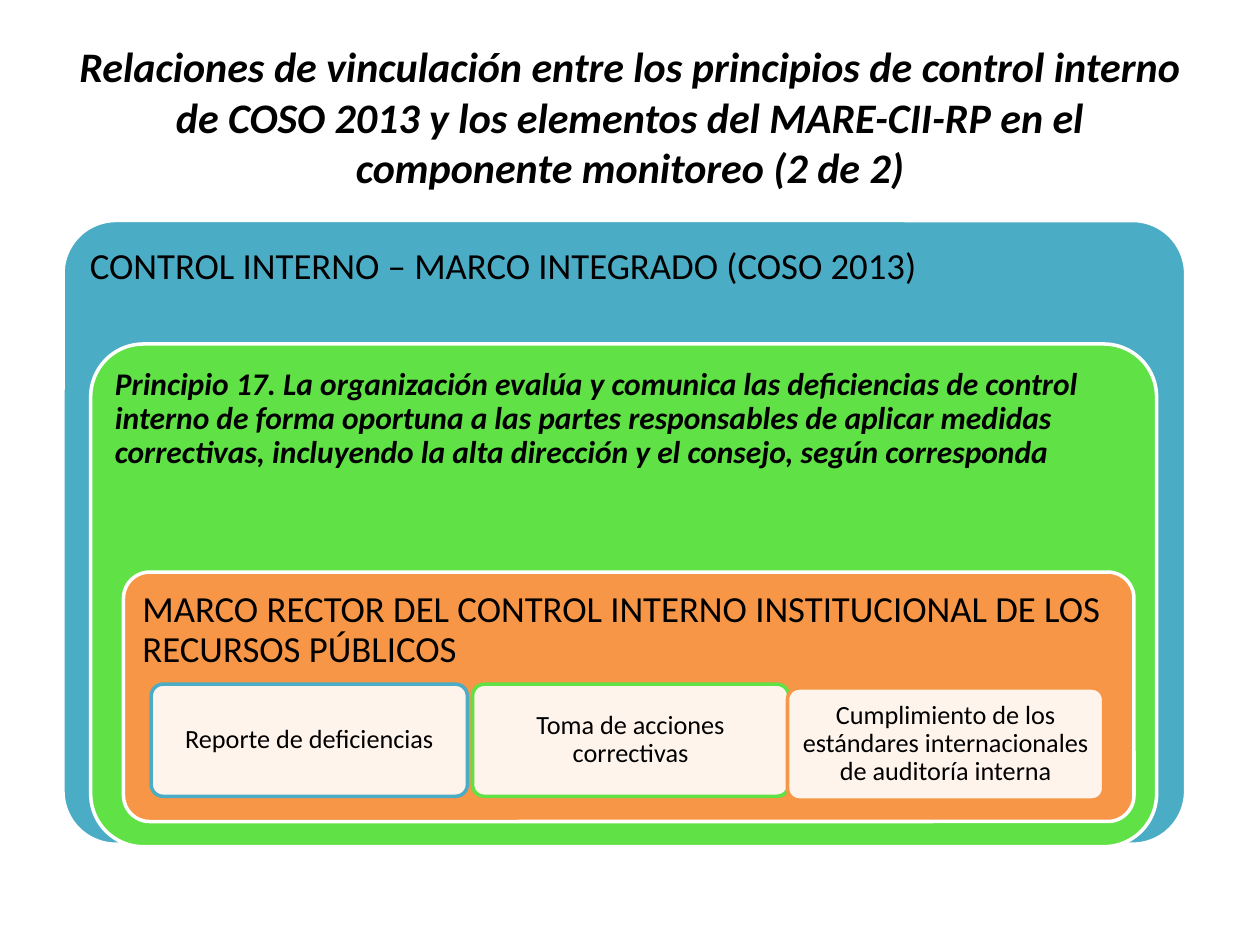
import dataclasses

import lxml.etree
import pptx
import pptx.dml.color
import pptx.enum.shapes
import pptx.enum.text
import pptx.oxml.ns
import pptx.util

Inches = pptx.util.Inches
Align = pptx.enum.text.PP_ALIGN
Anchor = pptx.enum.text.MSO_ANCHOR

COLORS = {
    "blue": "4BACC6",
    "green": "60E146",
    "orange": "F79646",
    "white": "FFFFFF",
    "black": "000000",
}


@dataclasses.dataclass(frozen=True)
class Layer:
    text: str
    left: float
    top: float
    width: float
    height: float
    color: str
    size: int = 21
    emphasis: bool = False
    margin: float = 0.09
    corner: float = 0.105


@dataclasses.dataclass(frozen=True)
class Element:
    text: str
    left: float
    top: float
    outline: str


TITLE = (
    "Relaciones de vinculación entre los principios de control interno de COSO 2013 "
    "y los elementos del MARE-CII-RP en el componente monitoreo (2 de 2)"
)
PRINCIPLE = (
    "Principio 17. La organización evalúa y comunica las deficiencias de control interno "
    "de forma oportuna a las partes responsables de aplicar medidas correctivas, "
    "incluyendo la alta dirección y el consejo, según corresponda"
)
LAYERS = [
    Layer("CONTROL INTERNO – MARCO INTEGRADO (COSO 2013)",
          0.5, 1.75, 8.91, 4.95, "blue", corner=0.085),
    Layer(PRINCIPLE, 0.72, 2.73, 8.46, 3.99, "green", size=18, emphasis=True, margin=0.07),
    Layer("MARCO RECTOR DEL CONTROL INTERNO INSTITUCIONAL DE LOS RECURSOS PÚBLICOS",
          0.98, 4.54, 8.02, 1.98, "orange"),
]
ELEMENTS = [
    Element("Reporte de deficiencias", 1.2, 5.43, "blue"),
    Element("Toma de acciones correctivas", 3.75, 5.43, "green"),
    Element("Cumplimiento de los estándares internacionales de auditoría interna",
            6.25, 5.46, "orange"),
]
ELEMENT_WIDTH, ELEMENT_HEIGHT = 2.51, 0.89


def rgb(name: str) -> pptx.dml.color.RGBColor:
    """Return the named colour."""
    return pptx.dml.color.RGBColor.from_string(COLORS[name])


def write(shape, text: str, *, size: int, emphasis: bool = False, align=Align.LEFT,
          anchor=Anchor.TOP, margin: float = 0.09, spacing: float = 0.9) -> None:
    """Write one formatted paragraph in a shape."""
    frame = shape.text_frame
    frame.word_wrap = True
    frame.vertical_anchor = anchor
    frame.margin_left = frame.margin_right = Inches(margin)
    frame.margin_top = frame.margin_bottom = Inches(margin)
    paragraph = frame.paragraphs[0]
    paragraph.alignment = align
    paragraph.line_spacing = spacing
    run = paragraph.add_run()
    run.text = text
    run.font.name = "Calibri"
    run.font.size = pptx.util.Pt(size)
    run.font.bold = run.font.italic = emphasis
    run.font.color.rgb = rgb("black")


def add_panel(slide, left: float, top: float, width: float, height: float, *,
              fill: str, outline: str, corner: float = 0.105, opacity: int = 100):
    """Add a rounded panel and return it."""
    panel = slide.shapes.add_shape(
        pptx.enum.shapes.MSO_SHAPE.ROUNDED_RECTANGLE,
        Inches(left), Inches(top), Inches(width), Inches(height))
    panel.adjustments[0] = corner
    panel.shadow.inherit = False
    panel.fill.solid()
    panel.fill.fore_color.rgb = rgb(fill)
    panel.line.color.rgb = rgb(outline)
    panel.line.width = pptx.util.Pt(2)
    if opacity < 100:
        qn = pptx.oxml.ns.qn
        color = panel.fill._xPr.find(qn("a:solidFill")).find(qn("a:srgbClr"))
        lxml.etree.SubElement(color, qn("a:alpha"), val=str(opacity * 1000))
    return panel


def draw_layer(slide, layer: Layer) -> None:
    """Draw one nested framework layer."""
    panel = add_panel(slide, layer.left, layer.top, layer.width, layer.height,
                      fill=layer.color, outline="white", corner=layer.corner)
    write(panel, layer.text, size=layer.size, emphasis=layer.emphasis, margin=layer.margin)


def draw_element(slide, element: Element) -> None:
    """Draw one element of the innermost framework."""
    panel = add_panel(slide, element.left, element.top, ELEMENT_WIDTH, ELEMENT_HEIGHT,
                      fill="white", outline=element.outline, opacity=90)
    write(panel, element.text, size=15, align=Align.CENTER, anchor=Anchor.MIDDLE, margin=0.06)


def main() -> None:
    """Build and save the slide."""
    deck = pptx.Presentation()
    deck.slide_width, deck.slide_height = Inches(10), Inches(7.5)
    slide = deck.slides.add_slide(deck.slide_layouts[6])
    heading = slide.shapes.add_textbox(Inches(0.5), Inches(0.3), Inches(9), Inches(1.25))
    write(heading, TITLE, size=24, emphasis=True, align=Align.CENTER,
          anchor=Anchor.MIDDLE, spacing=1.0)
    for layer in LAYERS:
        draw_layer(slide, layer)
    for element in ELEMENTS:
        draw_element(slide, element)
    deck.save("out.pptx")


if __name__ == "__main__":
    main()
